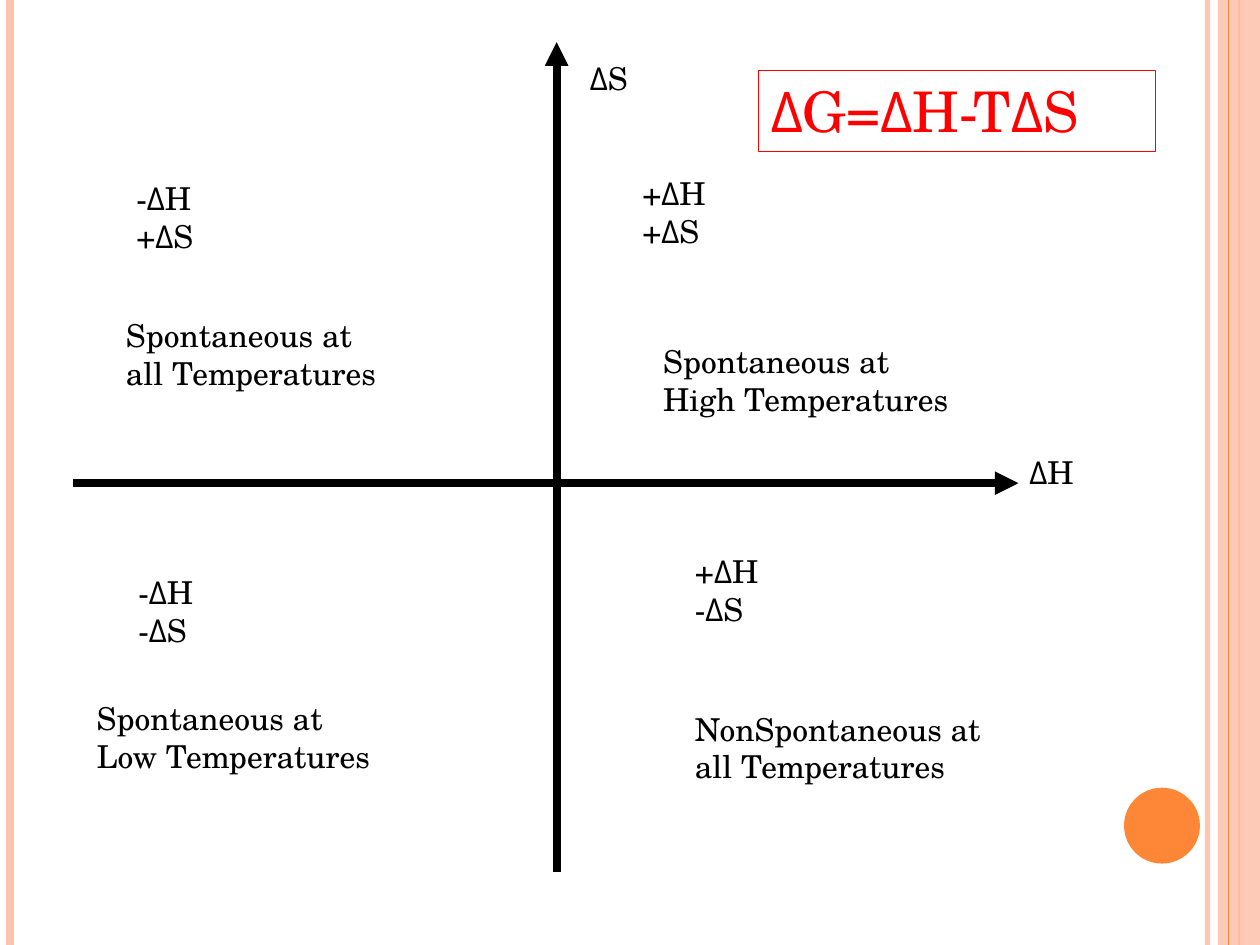
from dataclasses import dataclass
from itertools import groupby

from lxml import etree
from pptx import Presentation
from pptx import util as u
from pptx.dml.color import RGBColor
from pptx.enum import shapes, text
from pptx.oxml import ns


@dataclass(frozen=True)
class Theme:
    ink: str = "000000"
    red: str = "FF0000"
    peach: str = "FEC3AE"
    orange: str = "FE8637"
    font: str = "TeX Gyre Schola"
    delta_font: str = "Open Sans"
    body: int = 18
    formula: int = 32
    leading: float = 1.2


THEME = Theme()
WIDTH, HEIGHT = 25.4, 19.05


def rgb(color):
    return RGBColor.from_string(color)


def set_alpha(fill_parent, percent):
    """Make the solid colour inside an element partly transparent."""
    color = fill_parent.find(".//" + ns.qn("a:srgbClr"))
    etree.SubElement(color, ns.qn("a:alpha")).set("val", str(percent * 1000))


def add_line(slide, start, end, color, weight, arrow=False):
    line = slide.shapes.add_connector(
        shapes.MSO_CONNECTOR.STRAIGHT, *map(u.Cm, (*start, *end)))
    line.line.color.rgb = rgb(color)
    line.line.width = u.Pt(weight)
    properties = line._element.spPr
    if arrow:
        etree.SubElement(properties.find(ns.qn("a:ln")),
                         ns.qn("a:tailEnd")).set("type", "triangle")
    etree.SubElement(properties, ns.qn("a:effectLst"))
    return line


def add_solid(slide, kind, box, color):
    solid = slide.shapes.add_shape(kind, *map(u.Cm, box))
    solid.shadow.inherit = False
    solid.fill.solid()
    solid.fill.fore_color.rgb = rgb(color)
    solid.line.fill.background()
    return solid


def write(frame, lines, size, color):
    """Fill a text frame, giving every delta its own font."""
    frame.word_wrap = True
    frame.vertical_anchor = text.MSO_ANCHOR.TOP
    for index, line in enumerate(lines):
        paragraph = frame.paragraphs[0] if index == 0 else frame.add_paragraph()
        paragraph.alignment = text.PP_ALIGN.LEFT
        paragraph.line_spacing = u.Pt(size * THEME.leading)
        for is_delta, letters in groupby(line, key=lambda letter: letter == "Δ"):
            run = paragraph.add_run()
            run.text = "".join(letters)
            run.font.name = THEME.delta_font if is_delta else THEME.font
            run.font.size = u.Pt(size)
            run.font.color.rgb = rgb(color)


def add_label(slide, left, top, width, *lines):
    height = 0.25 + 1.02 * len(lines)
    label = slide.shapes.add_textbox(*map(u.Cm, (left, top, width, height)))
    write(label.text_frame, lines, THEME.body, THEME.ink)


def add_formula(slide, box, formula):
    frame = slide.shapes.add_shape(shapes.MSO_SHAPE.RECTANGLE, *map(u.Cm, box))
    frame.shadow.inherit = False
    frame.fill.background()
    frame.line.color.rgb = rgb(THEME.red)
    frame.line.width = u.Pt(0.75)
    write(frame.text_frame, [formula], THEME.formula, THEME.red)


def add_stripe(slide, x, color, weight):
    return add_line(slide, (x, 0), (x, HEIGHT), color, weight)


def add_decoration(slide):
    inner = add_stripe(slide, 24.34, THEME.peach, 3)
    set_alpha(inner._element.spPr, 93)
    add_stripe(slide, 0.21, THEME.peach, 4.5)
    add_stripe(slide, 24.98, THEME.orange, 1.5)
    band = add_solid(slide, shapes.MSO_SHAPE.RECTANGLE,
                     (24.55, 0, 0.85, HEIGHT), THEME.peach)
    set_alpha(band._element.spPr, 87)
    add_stripe(slide, 24.77, THEME.orange, 0.75)
    add_solid(slide, shapes.MSO_SHAPE.OVAL, (22.66, 15.88, 1.53, 1.53), THEME.orange)


def main():
    deck = Presentation()
    deck.slide_width, deck.slide_height = u.Cm(WIDTH), u.Cm(HEIGHT)
    slide = deck.slides.add_slide(deck.slide_layouts[6])

    add_decoration(slide)

    # Axes: enthalpy across, entropy upwards
    add_line(slide, (1.48, 9.74), (20.53, 9.74), THEME.ink, 4.5, arrow=True)
    add_line(slide, (11.22, 17.57), (11.22, 0.85), THEME.ink, 4.5, arrow=True)
    add_label(slide, 20.5, 9, 1.65, "ΔH")
    add_label(slide, 11.64, 1.06, 1.6, "ΔS")

    # Quadrants: signs, then the outcome
    add_label(slide, 2.5, 3.48, 2.1, "-ΔH", "+ΔS")
    add_label(slide, 2.29, 6.25, 6.86, "Spontaneous at", "all Temperatures")
    add_label(slide, 13.76, 11, 2.15, "+ΔH", "-ΔS")
    add_label(slide, 13.76, 14.18, 8, "NonSpontaneous at", "all Temperatures")
    add_label(slide, 12.7, 3.39, 2.15, "+ΔH", "+ΔS")
    add_label(slide, 13.12, 6.77, 7.77, "Spontaneous at", "High Temperatures")
    add_label(slide, 2.54, 11.43, 1.95, "-ΔH", "-ΔS")
    add_label(slide, 1.7, 13.97, 7.57, "Spontaneous at", "Low Temperatures")

    add_formula(slide, (15.29, 1.42, 8, 1.63), "ΔG=ΔH-TΔS")

    deck.save("out.pptx")


if __name__ == "__main__":
    main()
